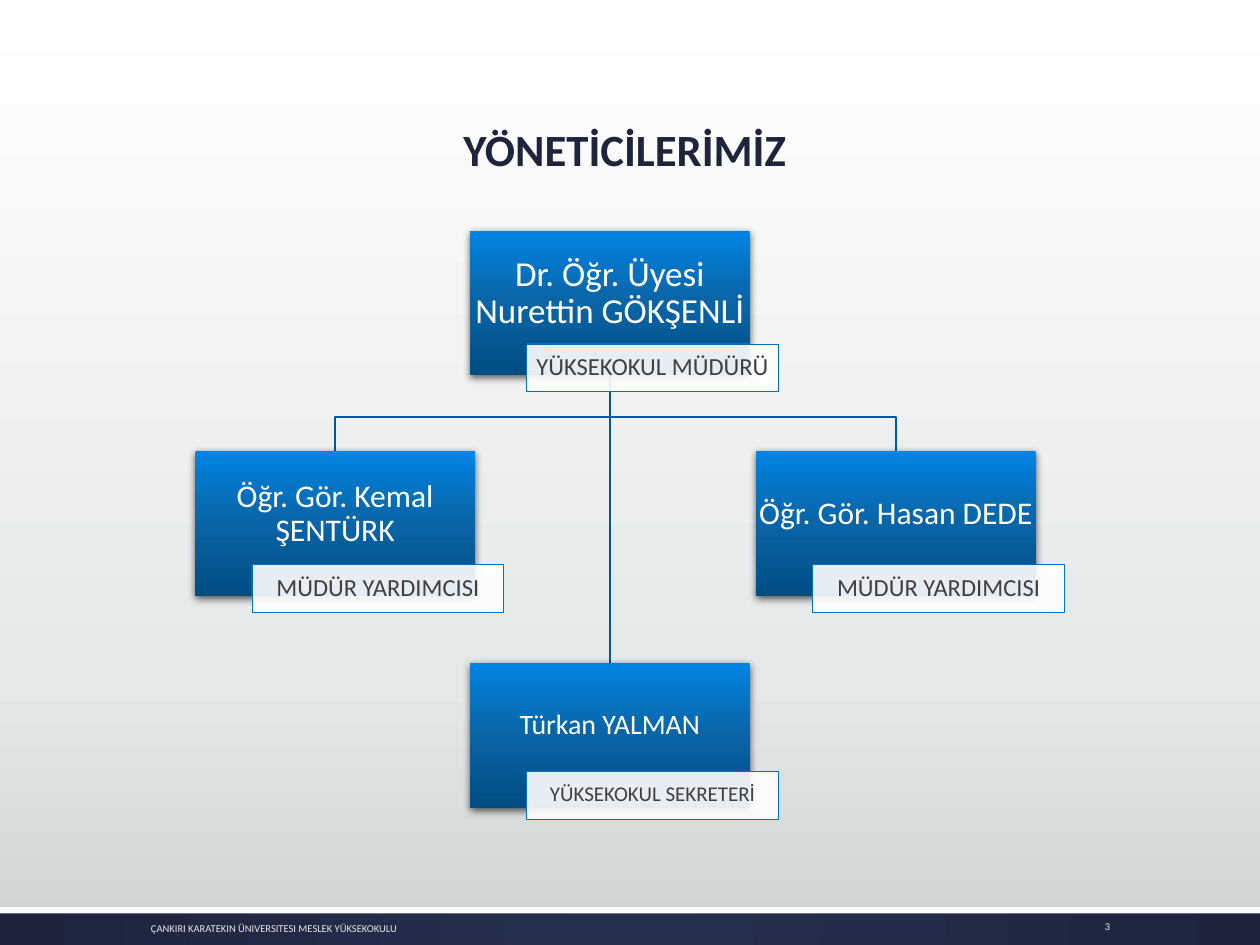
from lxml.etree import SubElement
from pptx import Presentation
from pptx.dml.color import RGBColor
from pptx.enum.shapes import MSO_SHAPE as Shape
from pptx.enum.text import MSO_ANCHOR as Anchor, PP_ALIGN as Align
from pptx.oxml.ns import qn
from pptx.util import Inches, Pt

W, H = 10, 7.5
COLS, ROWS = 100, 75
BOX_W, BOX_H = 22.2, 11.5
LABEL_W, LABEL_H = 20, 3.8
LABEL_DX, LABEL_DY = 4.5, 9
LEFT, MIDDLE, RIGHT = 15.5, 37.3, 60
TOP, SECOND, THIRD = 18.3, 35.8, 52.6

C = {
    "navy": "1D243C", "indigo": "263050", "white": "FFFFFF", "black": "000000",
    "mist": "E5E8E8", "grey": "CDD2D2", "ink": "404040", "edge": "0070C0",
    "line": "005A9A", "sky": "0084E3", "blue": "0A64A5", "deep": "004D84",
}

# name, its size, role, its size, column, row
PEOPLE = [
    ("Dr. Öğr. Üyesi Nurettin GÖKŞENLİ", 20, "YÜKSEKOKUL MÜDÜRÜ", 14, MIDDLE, TOP),
    ("Öğr. Gör. Kemal ŞENTÜRK", 18, "MÜDÜR YARDIMCISI", 14, LEFT, SECOND),
    ("Öğr. Gör. Hasan DEDE", 18, "MÜDÜR YARDIMCISI", 14, RIGHT, SECOND),
    ("Türkan YALMAN", 16, "YÜKSEKOKUL SEKRETERİ", 12, MIDDLE, THIRD),
]


def col(n):
    return Inches(n * W / COLS)


def row(n):
    return Inches(n * H / ROWS)


def rgb(name):
    return RGBColor.from_string(C[name])


def add_color(parent, name, alpha=None):
    clr = SubElement(parent, qn("a:srgbClr"), val=C[name])
    if alpha is not None:
        SubElement(clr, qn("a:alpha"), val=str(alpha * 1000))


def set_gradient(props, stops, radial=False):
    """Swap the solid fill in props for a gradient of (percent, colour) stops."""
    solid = props.find(qn("a:solidFill"))
    grad = SubElement(props, qn("a:gradFill"), rotWithShape="1")
    props.replace(solid, grad)
    stop_list = SubElement(grad, qn("a:gsLst"))
    for pos, name in stops:
        add_color(SubElement(stop_list, qn("a:gs"), pos=str(pos * 1000)), name)
    if radial:
        path = SubElement(grad, qn("a:path"), path="circle")
        SubElement(path, qn("a:fillToRect"),
                   **dict.fromkeys("ltrb", "50000"))
    else:
        SubElement(grad, qn("a:lin"), ang="5400000", scaled="0")


def write(sp, text, size, color, bold=False, align=Align.CENTER,
          anchor=Anchor.MIDDLE, spacing=0.9, insets=(0.1, 0.05, 0.1, 0.05)):
    tf = sp.text_frame
    tf.word_wrap = True
    tf.vertical_anchor = anchor
    (tf.margin_left, tf.margin_top,
     tf.margin_right, tf.margin_bottom) = map(Inches, insets)
    p = tf.paragraphs[0]
    p.alignment, p.line_spacing = align, spacing
    r = p.add_run()
    r.text = text
    r.font.name, r.font.size, r.font.bold = "Calibri", Pt(size), bold
    r.font.color.rgb = rgb(color)


def add_rect(s, x, y, w, h, fill):
    sp = s.shapes.add_shape(Shape.RECTANGLE, col(x), row(y), col(w), row(h))
    sp.shadow.inherit = False
    sp.fill.solid()
    sp.fill.fore_color.rgb = rgb(fill)
    sp.line.fill.background()
    return sp


def add_text(s, x, y, w, h, text, **fmt):
    write(s.shapes.add_textbox(col(x), row(y), col(w), row(h)), text, **fmt)


def add_branch(s, *points):
    """Draw an open line through points given as (column, row)."""
    (x, y), *rest = [(col(a), row(b)) for a, b in points]
    builder = s.shapes.build_freeform(x, y)
    builder.add_line_segments(rest, close=False)
    sp = builder.convert_to_shape()
    sp.shadow.inherit = False
    sp.fill.background()
    sp.line.color.rgb = rgb("line")
    sp.line.width = Pt(1)


def add_person(s, name, name_size, role, role_size, x, y):
    box = add_rect(s, x, y, BOX_W, BOX_H, "blue")
    props = box._element.spPr
    set_gradient(props, [(0, "sky"), (50, "blue"), (100, "deep")])
    shadow = SubElement(props.find(qn("a:effectLst")), qn("a:outerShdw"),
                        blurRad=str(Pt(4.5)), dist=str(Pt(1.5)),
                        dir="5400000", rotWithShape="0")
    add_color(shadow, "black", 63)
    write(box, name, name_size, "white", insets=(0.01, 0.01, 0.01, 0.16))

    label = add_rect(s, x + LABEL_DX, y + LABEL_DY - (y == THIRD) * 0.4,
                     LABEL_W, LABEL_H, "white")
    fill = label._element.spPr.find(qn("a:solidFill"))
    fill.clear()
    add_color(fill, "white", 90)
    label.line.color.rgb = rgb("edge")
    label.line.width = Pt(0.5)
    write(label, role, role_size, "ink", insets=(0.04, 0.01, 0.04, 0.01))


def add_backdrop(s):
    s.background.fill.solid()
    set_gradient(s._element.find(".//" + qn("p:bgPr")),
                 [(0, "white"), (72, "mist"), (100, "grey")])
    band = add_rect(s, 0, 72, COLS, 3, "navy")
    set_gradient(band._element.spPr, [(0, "indigo"), (100, "navy")], radial=True)
    add_rect(s, 0, 72, COLS, 0.5, "white")


def add_branches(s):
    center, start, bend = MIDDLE + BOX_W / 2, TOP + BOX_H, 33.1
    add_branch(s, (center, start), (center, THIRD))
    for x in (RIGHT, LEFT):
        end = x + BOX_W / 2
        add_branch(s, (center, start), (center, bend), (end, bend), (end, SECOND))


def main():
    prs = Presentation()
    prs.slide_width, prs.slide_height = Inches(W), Inches(H)
    s = prs.slides.add_slide(prs.slide_layouts[6])
    add_backdrop(s)
    add_text(s, 6.7, 5.1, 85.8, 9.4, "YÖNETİCİLERİMİZ", size=25.5,
             color="navy", bold=True, anchor=Anchor.BOTTOM)
    add_branches(s)
    for person in PEOPLE:
        add_person(s, *person)
    small = dict(size=6, color="mist", spacing=1)
    add_text(s, 11, 72.4, 58.7, 2.6,
             "ÇANKIRI KARATEKIN ÜNIVERSITESI MESLEK YÜKSEKOKULU",
             align=Align.LEFT, **small)
    add_text(s, 83.8, 72.2, 5.3, 2.6, "3", align=Align.RIGHT, **small)
    prs.save("out.pptx")


if __name__ == "__main__":
    main()
